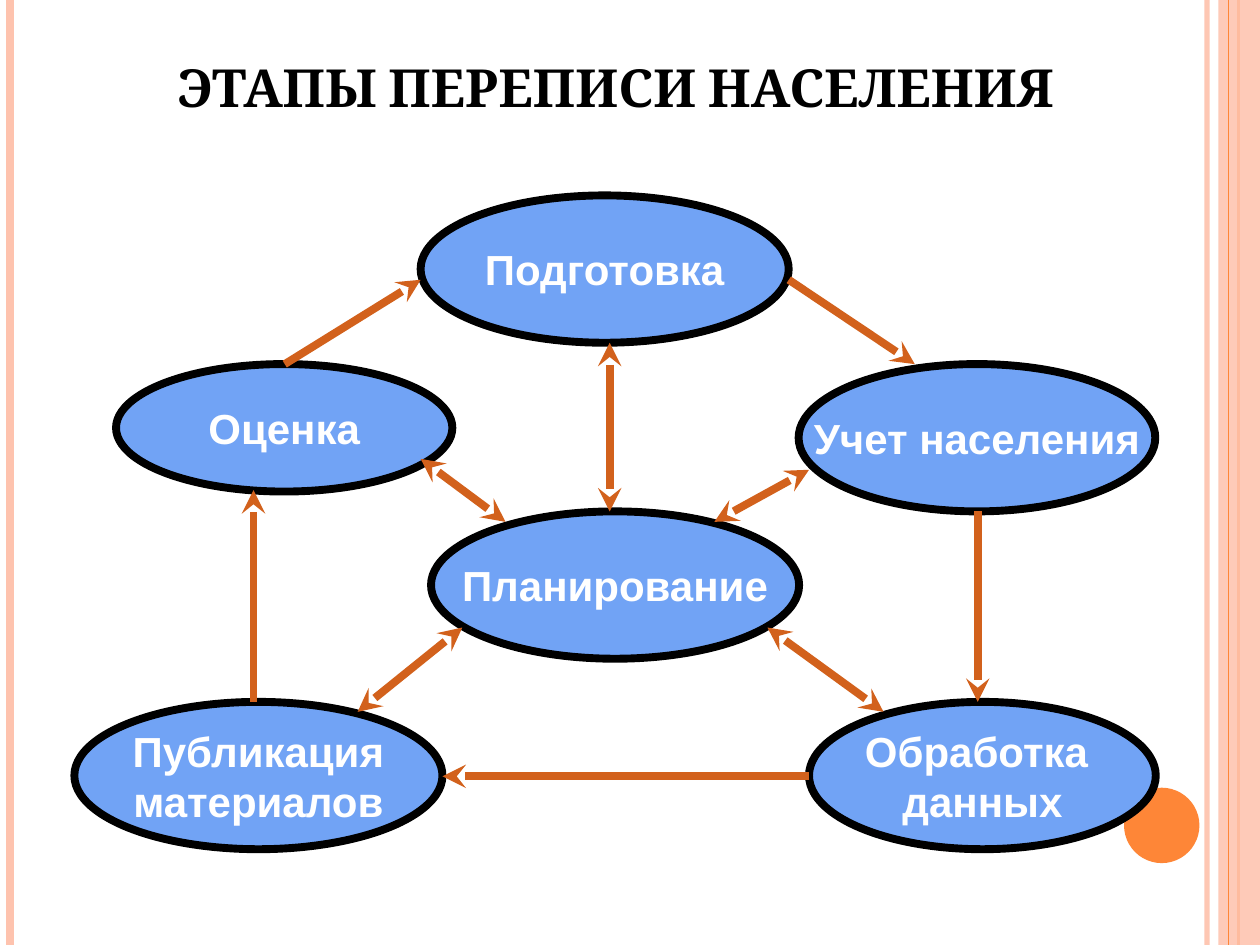
"""Builds a slide showing the stages of a population census as a cycle."""
import pptx
import pptx.dml.color
import pptx.enum.shapes
import pptx.enum.text
import pptx.oxml.ns
import pptx.util
from lxml import etree
from pptx.util import Cm

RGBColor = pptx.dml.color.RGBColor
MSO_SHAPE = pptx.enum.shapes.MSO_SHAPE
ANCHOR = pptx.enum.text.MSO_ANCHOR
qn = pptx.oxml.ns.qn

BLACK = RGBColor(0x00, 0x00, 0x00)
WHITE = RGBColor(0xFF, 0xFF, 0xFF)
BLUE = RGBColor(0x71, 0xA3, 0xF5)
RUST = RGBColor(0xD2, 0x61, 0x1C)
ORANGE = RGBColor(0xFE, 0x86, 0x37)
PEACH = RGBColor(0xFE, 0xC3, 0xAE)

SLIDE_W, SLIDE_H = 25.4, 19.05

STAGES = [
    ("Подготовка", 8.48, 3.94, 7.42, 2.97),
    ("Оценка", 2.34, 7.34, 6.78, 2.57),
    ("Планирование", 8.69, 10.31, 7.42, 2.97),
    ("Учет населения", 16.1, 7.34, 7.19, 2.97),
    ("Публикация\nматериалов", 1.5, 14.15, 7.42, 2.97),
    ("Обработка \nданных", 16.31, 14.15, 6.99, 2.97),
]
PLANNING_LINKS = [
    (12.29, 6.91, 12.29, 10.31),
    (16.31, 9.47, 14.4, 10.52),
    (10.19, 10.52, 8.48, 9.25),
    (9.32, 12.65, 7.21, 14.35),
    (15.47, 12.65, 17.81, 14.35),
]
CYCLE_STEPS = [
    (16.31, 15.65, 8.92, 15.65),
    (5.11, 14.15, 5.11, 9.88),
    (19.71, 10.31, 19.71, 14.15),
    (5.74, 7.34, 8.48, 5.64),
    (15.9, 5.64, 18.44, 7.34),
]


def set_alpha(fill, percent):
    color = fill._xPr.find(qn("a:solidFill"))[0]
    etree.SubElement(color, qn("a:alpha"), val=str(percent * 1000))


def add_line(slide, x1, y1, x2, y2, color, width, ends=()):
    sp = slide.shapes.add_connector(
        pptx.enum.shapes.MSO_CONNECTOR.STRAIGHT, Cm(x1), Cm(y1), Cm(x2), Cm(y2))
    sp.line.color.rgb = color
    sp.line.width = pptx.util.Pt(width)
    for end in ends:
        etree.SubElement(sp.line._ln, qn(end), type="stealth")
    etree.SubElement(sp._element.spPr, qn("a:effectLst"))
    return sp


def add_filled(slide, kind, x, y, w, h, color):
    sp = slide.shapes.add_shape(kind, Cm(x), Cm(y), Cm(w), Cm(h))
    sp.shadow.inherit = False
    sp.fill.solid()
    sp.fill.fore_color.rgb = color
    sp.line.fill.background()
    return sp


def write_text(sp, text, font, size, color, anchor, wrap):
    tf = sp.text_frame
    tf.text = text
    tf.word_wrap = wrap
    tf.vertical_anchor = anchor
    for p in tf.paragraphs:
        p.alignment = pptx.enum.text.PP_ALIGN.CENTER
        p.font.name = font
        p.font.size = pptx.util.Pt(size)
        p.font.bold = True
        p.font.color.rgb = color


def add_stage(slide, text, x, y, w, h):
    sp = add_filled(slide, MSO_SHAPE.OVAL, x, y, w, h, BLUE)
    sp.line.color.rgb = BLACK
    sp.line.width = pptx.util.Pt(4.5)
    write_text(sp, text, "Arial", 24, WHITE, ANCHOR.MIDDLE, False)


def add_title(slide, text):
    sp = slide.shapes.add_textbox(Cm(1.27), Cm(0.76), Cm(22.3), Cm(1.75))
    write_text(sp, text, "Cambria", 30, BLACK, ANCHOR.BOTTOM, True)


def add_decoration(slide):
    stripe = add_line(slide, 24.33, 0, 24.33, SLIDE_H, PEACH, 3)
    set_alpha(stripe.line.fill, 93)
    add_line(slide, 0.2, 0, 0.2, SLIDE_H, PEACH, 4.5)
    add_line(slide, 24.97, 0, 24.97, SLIDE_H, ORANGE, 1.5)
    band = add_filled(slide, MSO_SHAPE.RECTANGLE, 24.56, 0, 0.84, SLIDE_H, PEACH)
    set_alpha(band.fill, 87)
    add_line(slide, 24.77, 0, 24.77, SLIDE_H, ORANGE, 0.75)
    add_filled(slide, MSO_SHAPE.OVAL, 22.66, 15.88, 1.52, 1.52, ORANGE)


def main():
    prs = pptx.Presentation()
    prs.slide_width, prs.slide_height = Cm(SLIDE_W), Cm(SLIDE_H)
    slide = prs.slides.add_slide(prs.slide_layouts[6])
    add_decoration(slide)
    add_title(slide, "ЭТАПЫ ПЕРЕПИСИ НАСЕЛЕНИЯ")
    for stage in STAGES:
        add_stage(slide, *stage)
    for link in PLANNING_LINKS:
        add_line(slide, *link, RUST, 4.5, ("a:headEnd", "a:tailEnd"))
    for step in CYCLE_STEPS:
        add_line(slide, *step, RUST, 4.5, ("a:tailEnd",))
    prs.save("out.pptx")


if __name__ == "__main__":
    main()
